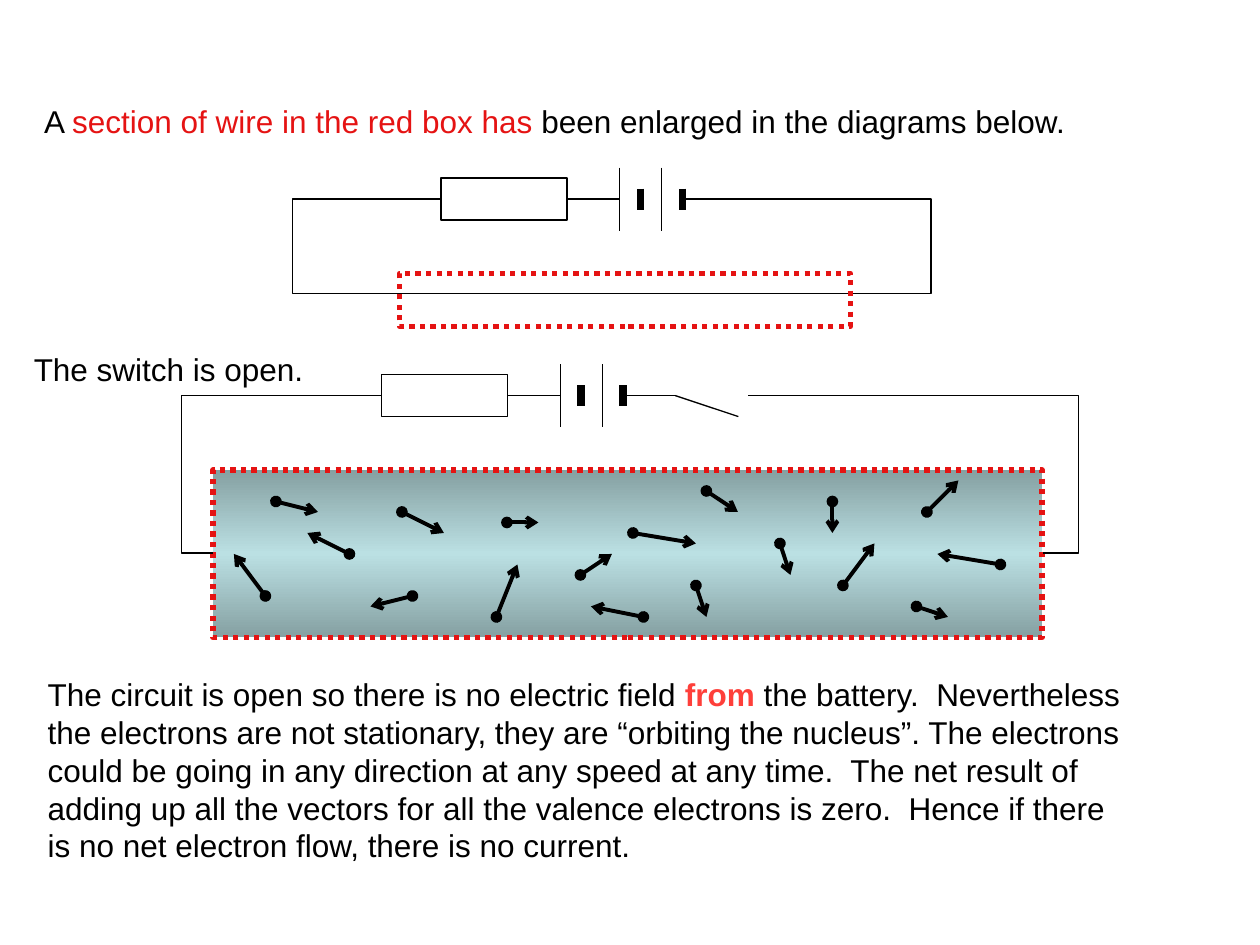
from copy import deepcopy
from dataclasses import dataclass

from lxml.etree import SubElement
from pptx import Presentation
from pptx.dml.color import RGBColor as Rgb
from pptx.enum.dml import MSO_LINE
from pptx.enum.shapes import MSO_CONNECTOR as Link, MSO_SHAPE as Shape
from pptx.enum.text import MSO_ANCHOR as Anchor, MSO_AUTO_SIZE as AutoSize, PP_ALIGN as Align
from pptx.oxml.ns import qn
from pptx.util import Inches, Pt


@dataclass(frozen=True)
class Theme:
    """Colours, font, sizes and the drawing grid of the slide."""
    font: str = "Arial"
    size: int = 18
    black: str = "000000"
    red: str = "E51313"
    accent: str = "FE3F3A"
    metal: str = "BBE0E3"
    shade: int = 46275
    thin: float = 0.75
    arrow: float = 2.25
    dotted: float = 3
    plate: float = 4.5
    unit: float = 1 / 12


THEME = Theme()

ELECTRONS = [
    (6, 3, 10, 4), (13, 8, 9, 6), (18, 4, 22, 6), (5, 12, 2, 8), (19, 12, 15, 13),
    (28, 5, 31, 5), (35, 10, 38, 8), (40, 6, 46, 7), (27, 14, 29, 9), (41, 14, 36, 13),
    (47, 2, 50, 4), (54, 7, 55, 10), (59, 3, 59, 6), (46, 11, 47, 14), (60, 11, 63, 7),
    (68, 4, 71, 1), (75, 9, 69, 8), (67, 13, 70, 14),
]

HEADING = [("A ", THEME.black), ("section of wire in the red box has", THEME.red),
           (" been enlarged in the diagrams below.", THEME.black)]
STATE = [("The switch is open.", THEME.black)]
EXPLANATION = [
    ("The circuit is open so there is no electric field ", THEME.black),
    ("from", THEME.accent),
    (" the battery.  Nevertheless the electrons are not stationary, they are “orbiting the "
     "nucleus”. The electrons could be going in any direction at any speed at any time.  The net "
     "result of adding up all the vectors for all the valence electrons is zero.  Hence if there "
     "is no net electron flow, there is no current.", THEME.black),
]


def write(holder, box, parts):
    """Fill a text holder placed in box with coloured parts, the accent one bold."""
    holder.left, holder.top, holder.width, holder.height = map(Inches, box)
    frame = holder.text_frame
    frame.word_wrap = True
    frame.auto_size = AutoSize.NONE
    frame.vertical_anchor = Anchor.TOP
    paragraph = frame.paragraphs[0]
    paragraph.alignment = Align.LEFT
    paragraph.font.name = THEME.font
    paragraph.font.size = Pt(THEME.size)
    for words, color in parts:
        run = paragraph.add_run()
        run.text = words
        run.font.color.rgb = Rgb.from_string(color)
        if color == THEME.accent:
            run.font.bold = True


def wire(slide, start, end, width=THEME.thin, kind=Link.STRAIGHT):
    """Draw a black connector from start to end."""
    link = slide.shapes.add_connector(kind, *map(Inches, (*start, *end)))
    link.line.color.rgb = Rgb.from_string(THEME.black)
    link.line.width = Pt(width)
    SubElement(link.element.spPr, qn("a:effectLst"))
    return link


def bent_wire(slide, start, end, via):
    """Draw a wire whose upright part stands at the abscissa via."""
    link = wire(slide, start, end, kind=Link.ELBOW)
    share = (via - start[0]) / (end[0] - start[0])
    guides = link.element.spPr.find(qn("a:prstGeom")).get_or_add_avLst()
    SubElement(guides, qn("a:gd"), name="adj1", fmla=f"val {round(share * 100000)}")


def outline(slide, box, color, width):
    """Draw an unfilled rectangle."""
    frame = slide.shapes.add_shape(Shape.RECTANGLE, *map(Inches, box))
    frame.shadow.inherit = False
    frame.fill.background()
    frame.line.color.rgb = Rgb.from_string(color)
    frame.line.width = Pt(width)
    return frame


def red_box(slide, box):
    """Draw the dotted red frame around a section of wire."""
    frame = outline(slide, box, THEME.red, THEME.dotted)
    frame.line.dash_style = MSO_LINE.ROUND_DOT
    return frame


def components(slide, left, row):
    """Draw a resistor starting at left and a battery of two cells along a row."""
    unit = THEME.unit
    outline(slide, (left, row - 2 * unit, 12 * unit, 4 * unit), THEME.black, THEME.thin)
    for column in (17, 21):
        long_x, short_x = left + column * unit, left + (column + 2) * unit
        wire(slide, (short_x, row - unit), (short_x, row + unit), THEME.plate)
        wire(slide, (long_x, row - 3 * unit), (long_x, row + 3 * unit))
    for first, last in ((12, 17), (23, 28)):
        wire(slide, (left + first * unit, row), (left + last * unit, row))


def circuit(slide, box, resistor, gap_end, section):
    """Draw a loop in box; gap_end starts its right top lead, section bounds the bottom leads."""
    left, top, width, height = box
    bottom = top + height
    bent_wire(slide, (section[1], bottom), (gap_end, top), left + width)
    bent_wire(slide, (section[0], bottom), (resistor, top), left)
    components(slide, resistor, top)


def open_switch(slide, left, top):
    """Draw the lifted arm of the switch."""
    wire(slide, (left, top), (left + 6 * THEME.unit, top + 2 * THEME.unit))


def enlarged_wire(slide, box):
    """Draw the shaded metal section with its wandering electrons."""
    metal = red_box(slide, box)
    metal.fill.gradient()
    metal.fill.gradient_angle = 90
    stops = metal.fill.gradient_stops
    for stop in stops:
        stop.color.rgb = Rgb.from_string(THEME.metal)
    first, last = (stop for stop in metal.element.spPr.iter(qn("a:gs")))
    middle = deepcopy(first)
    first.addnext(middle)
    for stop, position in ((first, 0), (middle, 50000), (last, 100000)):
        stop.set("pos", str(position))
    for stop in (first, last):
        SubElement(stop[0], qn("a:shade"), val=str(THEME.shade))
    left, top = box[:2]
    for x1, y1, x2, y2 in ELECTRONS:
        start = left + x1 * THEME.unit, top + y1 * THEME.unit
        end = left + x2 * THEME.unit, top + y2 * THEME.unit
        line = wire(slide, start, end, THEME.arrow).element.spPr.find(qn("a:ln"))
        SubElement(line, qn("a:headEnd"), type="oval")
        SubElement(line, qn("a:tailEnd"), type="arrow")


def main():
    """Build the slide and save it."""
    deck = Presentation()
    deck.slide_width, deck.slide_height = Inches(10), Inches(7.5)
    slide = deck.slides.add_slide(deck.slide_layouts[5])
    write(slide.shapes.title, (0.25, 0.76, 9.75, 0.4), HEADING)
    circuit(slide, (2.32, 1.58, 5.07, 0.75), 3.5, 5.83, (6.25, 3.58))
    red_box(slide, (3.17, 2.17, 3.58, 0.42))
    enlarged_wire(slide, (1.69, 3.73, 6.58, 1.33))
    circuit(slide, (1.44, 3.14, 7.12, 1.25), 3.03, 5.94, (1.69, 8.28))
    open_switch(slide, 5.36, 3.14)
    for box, parts in (((0.17, 2.73, 9.83, 0.4), STATE),
                       ((0.28, 5.31, 8.83, 1.62), EXPLANATION)):
        write(slide.shapes.add_textbox(0, 0, 0, 0), box, parts)
    deck.save("out.pptx")


if __name__ == "__main__":
    main()
